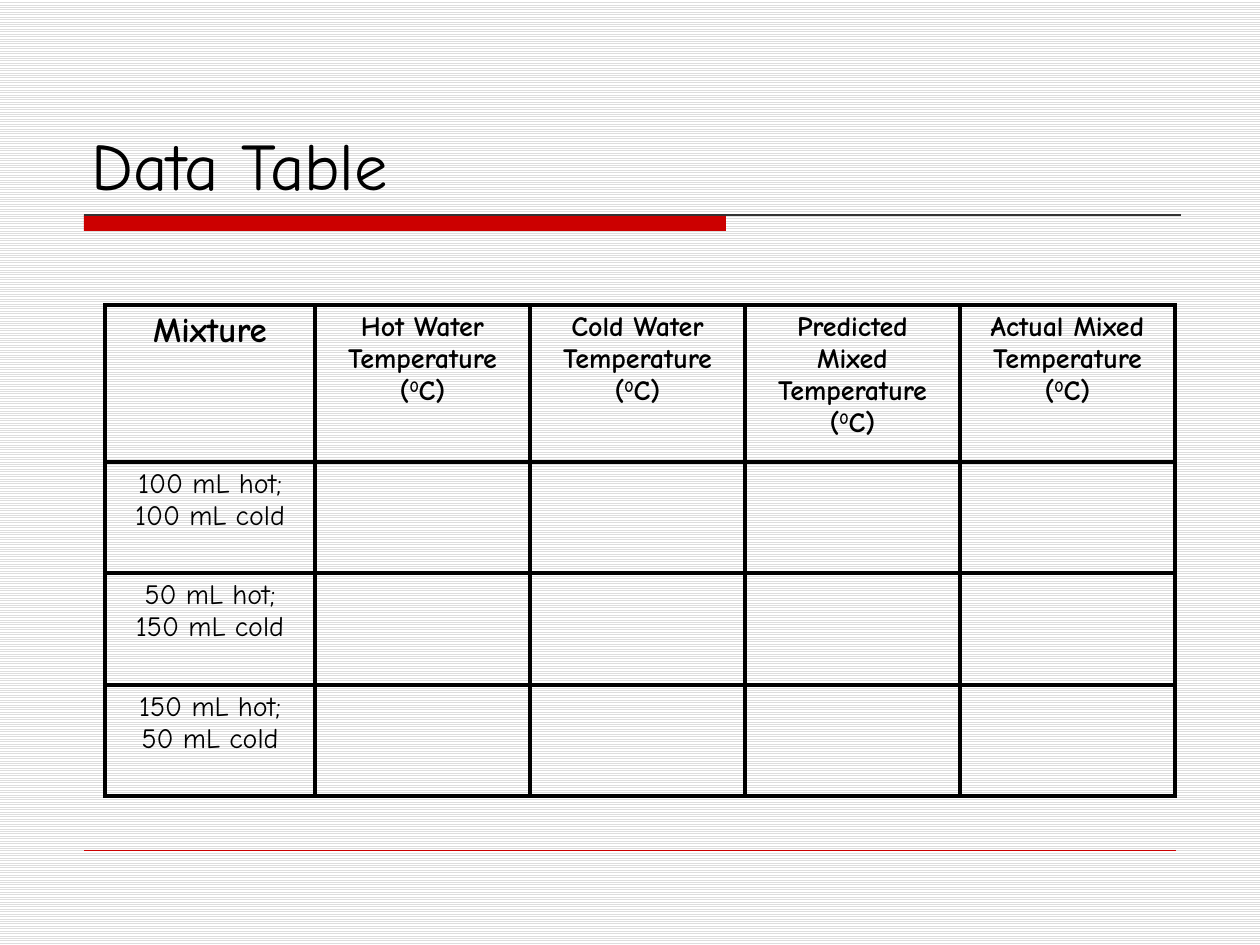
from lxml import etree
from pptx import Presentation
from pptx.dml.color import RGBColor
from pptx.enum import dml, shapes, text
from pptx.oxml.ns import qn
from pptx.util import Pt

PX = 914400 / 126
FONT = "Comic Neue"
COLORS = {"black": "000000", "white": "FFFFFF", "stripe": "DDDDDD",
          "red": "CC0000", "rule": "333333"}

HEADINGS = ["Hot Water", "Cold Water", "Predicted Mixed", "Actual Mixed"]
MIXTURES = [(100, 100), (50, 150), (150, 50)]
COLUMN_WIDTHS = [210] + [215] * 4
ROW_HEIGHTS = [157, 111, 112, 111]


def px(length):
    return round(length * PX)


def color(name):
    return RGBColor.from_string(COLORS[name])


def style_runs(paragraph, size, bold=False):
    for run in paragraph.runs:
        run.font.name = FONT
        run.font.size = Pt(size)
        run.font.bold = bold
        run.font.color.rgb = color("black")


def add_rule(slide, left, right, y, color_name, weight):
    rule = slide.shapes.add_connector(
        shapes.MSO_CONNECTOR.STRAIGHT, px(left), px(y), px(right), px(y))
    rule.line.color.rgb = color(color_name)
    rule.line.width = Pt(weight)
    etree.SubElement(rule._element.spPr, qn("a:effectLst"))


def set_background(slide):
    fill = slide.background.fill
    fill.patterned()
    fill.pattern = dml.MSO_PATTERN.LIGHT_HORIZONTAL
    fill.fore_color.rgb = color("stripe")
    fill.back_color.rgb = color("white")


def add_title(slide, left, top, width, height):
    title = slide.shapes.title
    title.left, title.top = px(left), px(top)
    title.width, title.height = px(width), px(height)
    frame = title.text_frame
    frame.text = "Data Table"
    frame.auto_size = text.MSO_AUTO_SIZE.NONE
    frame.vertical_anchor = text.MSO_ANCHOR.BOTTOM
    frame.paragraphs[0].alignment = text.PP_ALIGN.LEFT
    style_runs(frame.paragraphs[0], 38)


def add_title_bar(slide, left, top, width, height):
    bar = slide.shapes.add_shape(
        shapes.MSO_SHAPE.RECTANGLE, px(left), px(top), px(642), px(height))
    bar.shadow.inherit = False
    bar.fill.solid()
    bar.fill.fore_color.rgb = color("red")
    bar.line.fill.background()
    add_rule(slide, left, left + width, top, "rule", 0.75)


def format_cell(cell):
    cell.fill.background()
    properties = cell._tc.get_or_add_tcPr()
    # Borders come before the fill, in schema order
    for index, side in enumerate(("lnL", "lnR", "lnT", "lnB")):
        border = etree.Element(qn(f"a:{side}"), w=str(Pt(2.25)))
        fill = etree.SubElement(border, qn("a:solidFill"))
        etree.SubElement(fill, qn("a:srgbClr"), val=COLORS["black"])
        properties.insert(index, border)


def write_cell(cell, lines, size, bold=False):
    cell.text_frame.text = "\n".join(lines)
    for paragraph in cell.text_frame.paragraphs:
        paragraph.alignment = text.PP_ALIGN.CENTER
        style_runs(paragraph, size, bold)


def write_temperature_heading(cell, heading):
    write_cell(cell, [heading, "Temperature ("], 16, True)
    unit_line = cell.text_frame.paragraphs[1]
    degree, celsius = unit_line.add_run(), unit_line.add_run()
    degree.text, celsius.text = "0", "C)"
    style_runs(unit_line, 16, True)
    degree._r.get_or_add_rPr().set("baseline", "30000")


def add_data_table(slide, left, top):
    table = slide.shapes.add_table(
        len(ROW_HEIGHTS), len(COLUMN_WIDTHS), px(left), px(top),
        px(sum(COLUMN_WIDTHS)), px(sum(ROW_HEIGHTS))).table
    table.first_row = table.horz_banding = False
    for column, width in zip(table.columns, COLUMN_WIDTHS):
        column.width = px(width)
    for row, height in zip(table.rows, ROW_HEIGHTS):
        row.height = px(height)
    for cell in table.iter_cells():
        format_cell(cell)

    # Heading row
    write_cell(table.cell(0, 0), ["Mixture"], 20, True)
    for column, heading in enumerate(HEADINGS, 1):
        write_temperature_heading(table.cell(0, column), heading)

    # Mixture column
    for row, (hot, cold) in enumerate(MIXTURES, 1):
        write_cell(table.cell(row, 0), [f"{hot} mL hot;", f"{cold} mL cold"], 16)


def main():
    presentation = Presentation()
    presentation.slide_width, presentation.slide_height = px(1260), px(945)
    slide = presentation.slides.add_slide(presentation.slide_layouts[5])
    set_background(slide)
    add_title_bar(slide, 84, 215, 1097, 16)
    add_rule(slide, 84, 1176, 850, "red", 0.25)  # footer rule
    add_title(slide, 79, 42, 1103, 168)
    add_data_table(slide, 105, 305)
    presentation.save("out.pptx")


if __name__ == "__main__":
    main()
